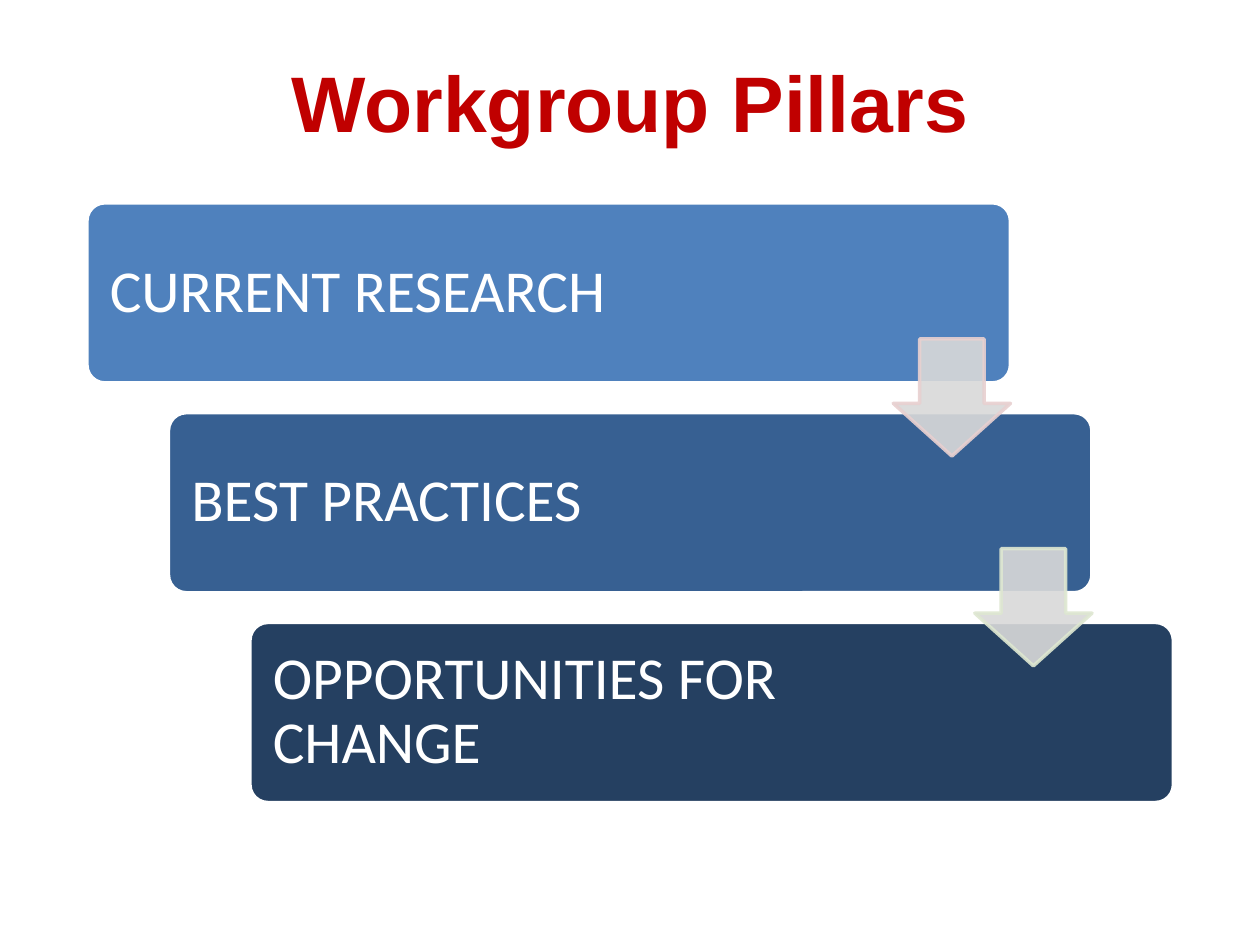
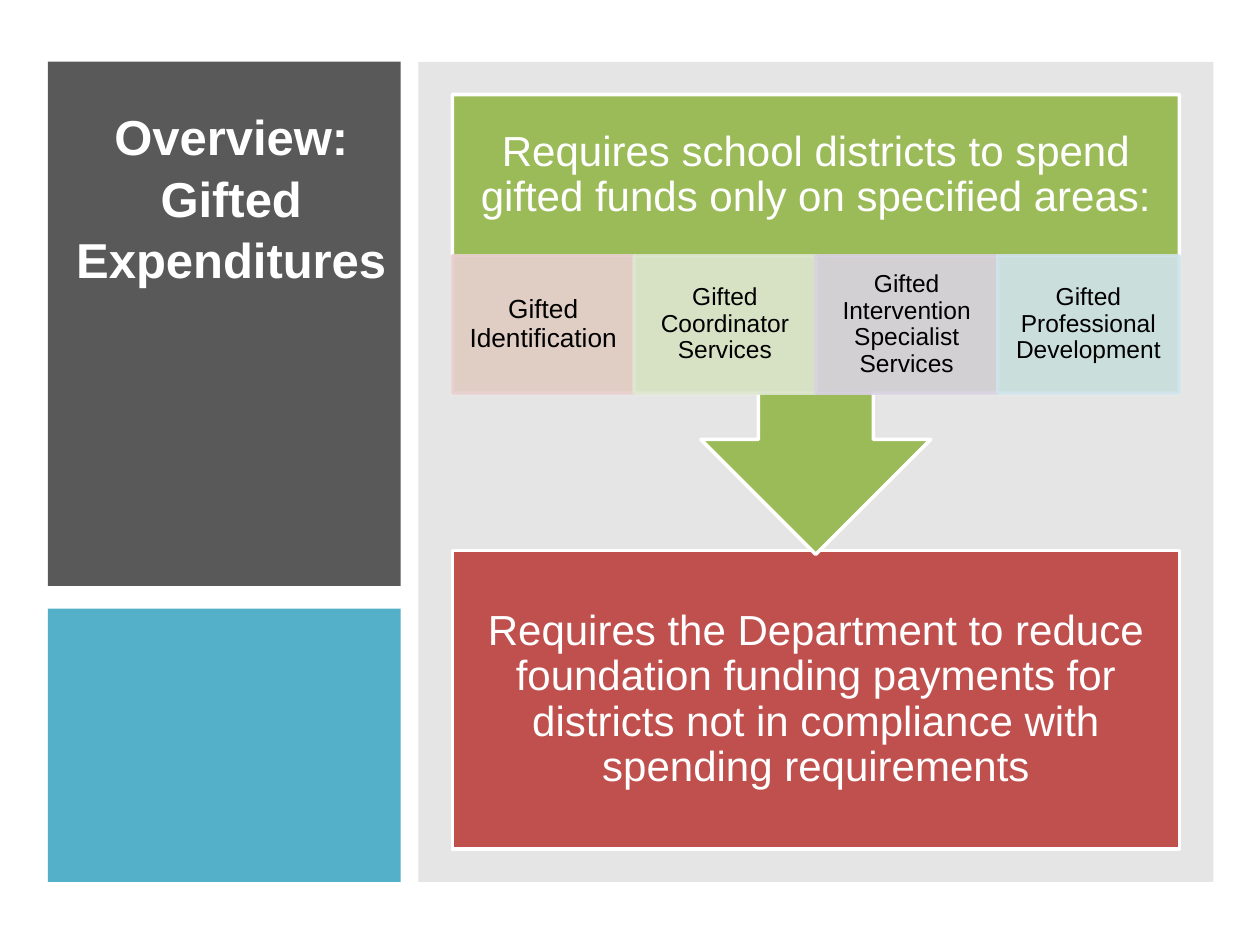
import pptx
import pptx.dml.color
import pptx.enum.shapes
import pptx.enum.text
import pptx.oxml
import pptx.oxml.ns
import pptx.util

SHAPE = pptx.enum.shapes.MSO_SHAPE
ALIGN = pptx.enum.text.PP_ALIGN
ANCHOR = pptx.enum.text.MSO_ANCHOR
WHITE, BLACK = "FFFFFF", "000000"
GREEN, RED, PALE_GREEN = "9BBB59", "C0504D", "DEE7D1"

deck = pptx.Presentation()
deck.slide_width = pptx.util.Inches(10)
deck.slide_height = pptx.util.Inches(7.5)
CELL = deck.slide_width / 100  # the grid has 100 columns and 75 rows


def paint(target, colour, opacity=100):
    """Give a fill or a font a solid colour, with opacity in percent."""
    fill = target.fill
    fill.solid()
    fill.fore_color.rgb = pptx.dml.color.RGBColor.from_string(colour)
    if opacity < 100:
        colour_node = next(fill._xPr.iter(pptx.oxml.ns.qn("a:srgbClr")))
        alpha = pptx.oxml.parse_xml(f"<a:alpha {pptx.oxml.ns.nsdecls('a')}/>")
        alpha.set("val", str(opacity * 1000))
        colour_node.append(alpha)


def add_block(slide, kind, place, colour, line=None, opacity=100, text="", size=24,
              font="Arial", ink=WHITE, align=ALIGN.CENTER, insets=(1.9, 1.9, 1.9, 1.9)):
    """Add a filled shape with text; place and insets are in grid cells."""
    block = slide.shapes.add_shape(kind, *(int(CELL * length) for length in place))
    block.shadow.inherit = False
    paint(block, colour, opacity)
    if line:
        block.line.width = pptx.util.Pt(2)
        paint(block.line, line, opacity)
    else:
        block.line.fill.background()
    if text:
        frame = block.text_frame
        frame.text = text
        frame.word_wrap = True
        frame.vertical_anchor = ANCHOR.MIDDLE
        (frame.margin_left, frame.margin_top, frame.margin_right,
         frame.margin_bottom) = (int(CELL * inset) for inset in insets)
        paragraph = frame.paragraphs[0]
        paragraph.alignment = align
        paragraph.line_spacing = 0.9
        paragraph.font.size = pptx.util.Pt(size)
        paragraph.font.name = font
        paint(paragraph.font, ink)
    return block


# Titles
slides = []
for heading, size, colour, place in (
    ("Workgroup Pillars", 45, "C00000", (6.9, 3.7, 86.2, 12.4)),
    ("Overview: Gifted Expenditures", 28, WHITE, (4.9, 8, 26.9, 35.4)),
):
    slide = deck.slides.add_slide(deck.slide_layouts[5])
    slides.append(slide)
    title = slide.shapes.title
    title.left, title.top, title.width, title.height = (int(CELL * length) for length in place)
    frame = title.text_frame
    frame.text = heading
    frame.word_wrap = True
    frame.auto_size = pptx.enum.text.MSO_AUTO_SIZE.NONE
    frame.vertical_anchor = ANCHOR.TOP
    frame.margin_left = frame.margin_right = frame.margin_bottom = 0
    frame.margin_top = int(CELL * 0.2)
    paragraph = frame.paragraphs[0]
    paragraph.alignment = ALIGN.CENTER
    paragraph.line_spacing = 1.05
    run_font = paragraph.runs[0].font
    run_font.name, run_font.size, run_font.bold = "Arial", pptx.util.Pt(size), True
    paint(run_font, colour)
pillars_slide, overview_slide = slides

# Pillars: a staircase of three steps joined by two arrows
STEP_X, STEP_Y = 6.47, 16.65
pillars = (("CURRENT RESEARCH", "4F81BD"), ("BEST PRACTICES", "376092"),
           ("OPPORTUNITIES FOR CHANGE", "254061"))
for step, (pillar, colour) in enumerate(pillars):
    place = (6.9 + step * STEP_X, 16.1 + step * STEP_Y, 73.3, 14.3)
    bar = add_block(pillars_slide, SHAPE.ROUNDED_RECTANGLE, place, colour, WHITE,
                    text=pillar, size=34, font="Calibri", align=ALIGN.LEFT,
                    insets=(1.4, 1.4, 17.2, 1.4))
    bar.adjustments[0] = 0.1
for step, outline in enumerate(("E8D0D0", PALE_GREEN)):
    place = (70.9 + step * STEP_X, 26.9 + step * STEP_Y, 9.3, 9.3)
    arrow = add_block(pillars_slide, SHAPE.DOWN_ARROW, place, "D9D9D9", outline, opacity=90)
    arrow.adjustments[0], arrow.adjustments[1] = 0.55, 0.45

# Overview: side panels, with the title in front of the dark one
add_block(overview_slide, SHAPE.RECTANGLE, (3.8, 4.9, 28, 41.6), "595959")
overview_slide.shapes._spTree.append(overview_slide.shapes.title._element)
add_block(overview_slide, SHAPE.RECTANGLE, (3.8, 48.3, 28, 21.7), "4BACC6", opacity=95)
add_block(overview_slide, SHAPE.RECTANGLE, (33.2, 4.9, 63.1, 65.1), "808080", opacity=20)

# Overview: spending rule, its areas and the consequence
FLOW_LEFT, FLOW_WIDTH, AREA_HEIGHT = 35.9, 57.7, 10.9
add_block(overview_slide, SHAPE.RECTANGLE, (FLOW_LEFT, 43.7, FLOW_WIDTH, 23.7), RED, WHITE,
          text="Requires the Department to reduce foundation funding payments for "
               "districts not in compliance with spending requirements")
add_block(overview_slide, SHAPE.DOWN_ARROW_CALLOUT, (FLOW_LEFT, 7.5, FLOW_WIDTH, 36.5),
          GREEN, WHITE,
          text="Requires school districts to spend gifted funds only on specified areas:",
          insets=(1.9, 1.9, 1.9, 1.9 + AREA_HEIGHT))
areas = (("Gifted Identification", "E8D0D0", 15),
         ("Gifted Coordinator Services", PALE_GREEN, 14),
         ("Gifted Intervention Specialist Services", "D8D3E0", 14),
         ("Gifted Professional Development", "D0E3EA", 14))
area_width = FLOW_WIDTH / len(areas)
for column, (area, colour, size) in enumerate(areas):
    place = (FLOW_LEFT + column * area_width, 20.3, area_width, AREA_HEIGHT)
    add_block(overview_slide, SHAPE.RECTANGLE, place, colour, colour, opacity=90, text=area,
              size=size, ink=BLACK, insets=(1.1, 0.2, 1.1, 0.2))

deck.save("out.pptx")
